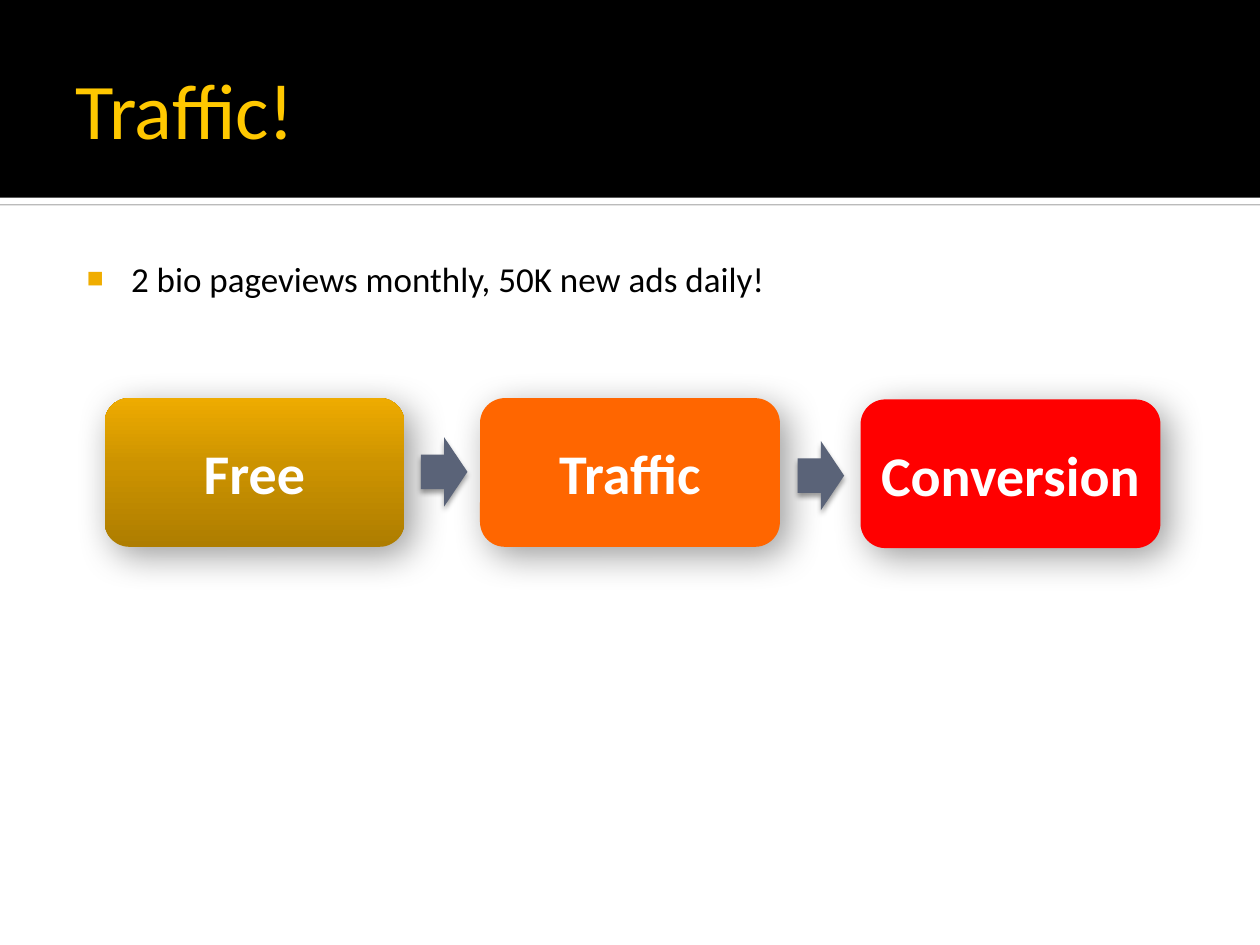
from pptx import Presentation
from pptx.dml.color import RGBColor
from pptx.enum.shapes import MSO_SHAPE
from pptx.enum.text import MSO_ANCHOR, MSO_AUTO_SIZE, PP_ALIGN
from pptx.oxml import parse_xml
from pptx.oxml.ns import nsdecls, qn
from pptx.util import Inches, Pt

BLOCK_SHADOW = ("000000", 38, 21, 7, 48)
ARROW_SHADOW = ("000000", 38, 3.1, 2, 90)
RULE_SHADOW = ("808080", 60, 0, 0.8, 90)
GOLD_STOPS = ((0, "AE7D00"), (55, "CC9300"), (100, "EEAB00"))


def color(value):
    """Turn a hex string into a colour."""
    return RGBColor.from_string(value)


def inches(box):
    """Convert a left, top, width, height box to lengths."""
    return [Inches(length) for length in box]


def add_shadow(shape, shade, alpha, blur, distance, angle):
    """Give a shape an outer shadow."""
    effects = shape.element.spPr.find(qn("a:effectLst"))
    effects.append(parse_xml(
        f'<a:outerShdw {nsdecls("a")} blurRad="{Pt(blur)}" dist="{Pt(distance)}" '
        f'dir="{angle * 60000}" algn="tl" rotWithShape="0"><a:srgbClr val="{shade}">'
        f'<a:alpha val="{alpha * 1000}"/></a:srgbClr></a:outerShdw>'))


def add_block(page, kind, box, fill, shadow=None):
    """Add a borderless shape with a solid or vertical gradient fill."""
    shape = page.shapes.add_shape(kind, *inches(box))
    shape.shadow.inherit = False
    shape.line.fill.background()
    if isinstance(fill, str):
        shape.fill.solid()
        shape.fill.fore_color.rgb = color(fill)
    else:
        stops = "".join(f'<a:gs pos="{place * 1000}"><a:srgbClr val="{shade}"/></a:gs>'
                        for place, shade in fill)
        shape.element.spPr.find(qn("a:prstGeom")).addnext(parse_xml(
            f'<a:gradFill {nsdecls("a")} rotWithShape="1"><a:gsLst>{stops}</a:gsLst>'
            '<a:lin ang="16200000" scaled="0"/></a:gradFill>'))
    if shadow:
        add_shadow(shape, *shadow)
    return shape


def add_span(para, text, size, shade, bold=False):
    """Add one formatted run to a paragraph."""
    span = para.add_run()
    span.text = text
    span.font.name = "Calibri"
    span.font.size = Pt(size)
    span.font.bold = bold
    span.font.color.rgb = color(shade)


def place_frame(placeholder, box, margins, anchor):
    """Move a placeholder, set its text frame and return its first paragraph."""
    placeholder.left, placeholder.top, placeholder.width, placeholder.height = inches(box)
    frame = placeholder.text_frame
    frame.word_wrap = True
    frame.auto_size = MSO_AUTO_SIZE.NONE
    frame.vertical_anchor = anchor
    (frame.margin_left, frame.margin_top,
     frame.margin_right, frame.margin_bottom) = inches(margins)
    para = frame.paragraphs[0]
    para.alignment = PP_ALIGN.LEFT
    para.space_before = Pt(0)
    return para


def add_header(page, box, text):
    """Draw the black band with its rule and set the title on it."""
    left, top, width, height = box
    title = page.shapes.title
    rule = add_block(page, MSO_SHAPE.RECTANGLE, (left, top + height, width, 0.05),
                     "FFFFFF", RULE_SHADOW)
    band = add_block(page, MSO_SHAPE.RECTANGLE, box, "000000")
    for shape in (rule, band):
        title.element.addprevious(shape.element)
    para = place_frame(title, (left + 0.5, top + 0.17, width - 1, height - 0.2),
                       (0.1, 0.05, 0.05, 0.05), MSO_ANCHOR.MIDDLE)
    add_span(para, text, 45, "FFC800")


def add_bullets(page, box, text):
    """Fill the body placeholder with a square-bulleted line."""
    para = place_frame(page.placeholders[1], box, (0.06, 0.1, 0.1, 0.05), MSO_ANCHOR.TOP)
    properties = para._p.get_or_add_pPr()
    properties.set("marL", str(Inches(0.48)))
    properties.set("indent", str(Inches(-0.35)))
    for bullet in ('buClr {}><a:srgbClr val="F0AD00"/></a:buClr>',
                   'buSzPct {} val="80000"/>',
                   'buFont {} typeface="Arial"/>',
                   'buChar {} char="■"/>'):
        properties.append(parse_xml("<a:" + bullet.format(nsdecls("a"))))
    add_span(para, text, 20, "000000")


def add_step(page, box, text, fill):
    """Add one labelled step of the flow."""
    step = add_block(page, MSO_SHAPE.ROUNDED_RECTANGLE, box, fill, BLOCK_SHADOW)
    frame = step.text_frame
    frame.word_wrap = False
    frame.vertical_anchor = MSO_ANCHOR.MIDDLE
    para = frame.paragraphs[0]
    para.alignment = PP_ALIGN.CENTER
    add_span(para, text, 32, "FFFFFF", True)


def add_flow(page, box):
    """Add the three steps and the arrows between them."""
    left, top, width, height = box
    steps = ((0, 0, "Free", GOLD_STOPS), (2.98, 0, "Traffic", "FF6600"),
             (6, 0.01, "Conversion", "FF0000"))
    for across, down, text, fill in steps:
        add_step(page, (left + across, top + down, 2.38, height), text, fill)
    for across, down in ((2.51, 0.31), (5.5, 0.34)):
        add_block(page, MSO_SHAPE.RIGHT_ARROW, (left + across, top + down, 0.37, 0.55),
                  "5A6378", ARROW_SHADOW)


def main():
    """Build and save the deck."""
    deck = Presentation()
    deck.slide_width, deck.slide_height = Inches(10), Inches(7.5)
    page = deck.slides.add_slide(deck.slide_layouts[1])
    add_header(page, (0, 0, 10, 1.57), "Traffic!")
    add_bullets(page, (0.5, 1.94, 9, 5.06), "2 bio pageviews monthly, 50K new ads daily!")
    add_flow(page, (0.83, 3.16, 8.38, 1.18))
    deck.save("out.pptx")


if __name__ == "__main__":
    main()
